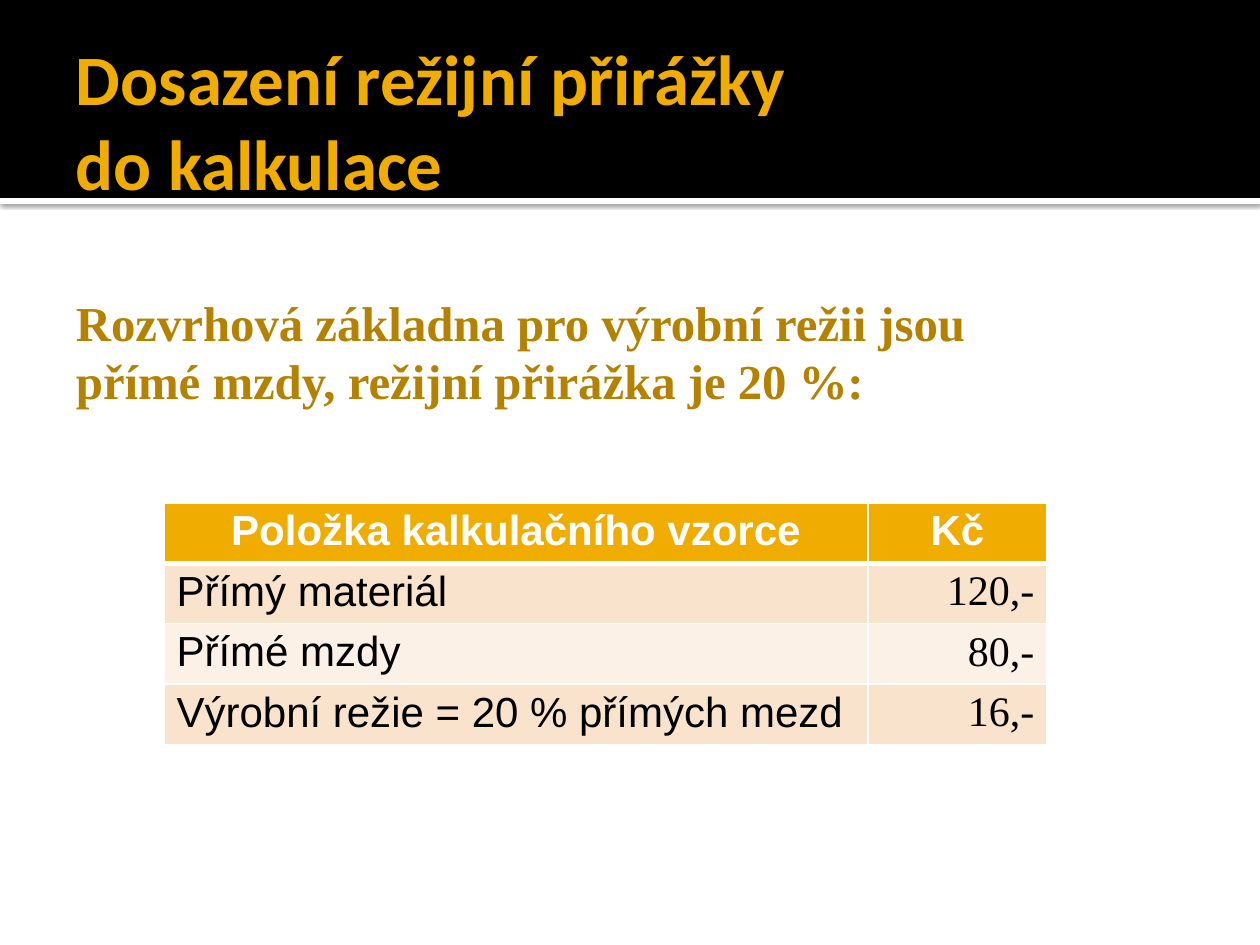
from dataclasses import dataclass

from lxml import etree
from pptx import Presentation
from pptx.dml.color import RGBColor
from pptx.enum.shapes import MSO_SHAPE
from pptx.enum.text import MSO_ANCHOR, PP_ALIGN
from pptx.oxml.ns import qn
from pptx.util import Emu, Pt

RECTANGLE = MSO_SHAPE.RECTANGLE
TOP = MSO_ANCHOR.TOP
LEFT, CENTER, RIGHT = PP_ALIGN.LEFT, PP_ALIGN.CENTER, PP_ALIGN.RIGHT
EMU_PER_PX = 914400 / 126


@dataclass(frozen=True)
class Theme:
    black: str = "000000"
    white: str = "FFFFFF"
    gold: str = "F0AD00"
    dark_gold: str = "B48200"
    bands: tuple = ("F9E3CC", "FCF1E7")
    title_font: str = "Calibri"
    serif: str = "Times New Roman"
    sans: str = "Arial"
    title_size: float = 40.5
    subtitle_size: float = 27.9
    table_size: float = 24


THEME = Theme()
TITLE = ("Dosazení režijní přirážky", "do kalkulace")
SUBTITLE = (
    "Rozvrhová základna pro výrobní režii jsou",
    "přímé mzdy, režijní přirážka je 20 %:",
)
HEADER = ("Položka kalkulačního vzorce", "Kč")
ITEMS = (
    ("Přímý materiál", "120,-"),
    ("Přímé mzdy", "80,-"),
    ("Výrobní režie = 20 % přímých mezd", "16,-"),
)
COLUMN_WIDTHS = (704, 179)
ROW_HEIGHT = 59


def px(length):
    return Emu(round(length * EMU_PER_PX))


def add_span(para, text, font, size, color, bold=False):
    span = para.add_run()
    span.text = text
    span.font.name = font
    span.font.size = Pt(size)
    span.font.bold = bold
    span.font.color.rgb = RGBColor.from_string(color)


def add_lines(para, lines, font, size, color):
    for index, line in enumerate(lines):
        if index:
            para.add_line_break()
        add_span(para, line, font, size, color, bold=True)


def add_band(page, top, height, color):
    band = page.shapes.add_shape(RECTANGLE, 0, px(top), px(1260), px(height))
    band.shadow.inherit = False
    band.fill.solid()
    band.fill.fore_color.rgb = RGBColor.from_string(color)
    band.line.fill.background()
    return band


def add_shadow(shape, color):
    effects = shape._element.spPr.find(qn("a:effectLst"))
    shadow = etree.SubElement(
        effects, qn("a:outerShdw"), blurRad=str(Pt(2.5)), dist=str(Pt(0.8)),
        dir="5400000", algn="t", rotWithShape="0",
    )
    tone = etree.SubElement(shadow, qn("a:srgbClr"), val=color)
    etree.SubElement(tone, qn("a:alpha"), val="60000")


def add_heading(page):
    box = page.shapes.add_textbox(px(63), px(21), px(1134), px(392))
    frame = box.text_frame
    frame.word_wrap = True
    frame.vertical_anchor = TOP
    frame.margin_left, frame.margin_right = px(13), px(6)
    frame.margin_top, frame.margin_bottom = px(14), px(6)
    title = frame.paragraphs[0]
    add_lines(title, TITLE, THEME.title_font, THEME.title_size, THEME.gold)
    subtitle = frame.add_paragraph()
    subtitle.space_before = Pt(50)
    add_lines(subtitle, SUBTITLE, THEME.serif, THEME.subtitle_size, THEME.dark_gold)


def set_borders(cell, bottom_width):
    properties = cell._tc.get_or_add_tcPr()
    widths = {"a:lnL": 1, "a:lnR": 1, "a:lnT": 1, "a:lnB": bottom_width}
    for index, (side, width) in enumerate(widths.items()):
        line = etree.Element(qn(side), w=str(Pt(width)))
        fill = etree.SubElement(line, qn("a:solidFill"))
        etree.SubElement(fill, qn("a:srgbClr"), val=THEME.white)
        properties.insert(index, line)


def fill_cell(cell, text, font, color, fill, align, header=False):
    cell.fill.solid()
    cell.fill.fore_color.rgb = RGBColor.from_string(fill)
    cell.margin_top = cell.margin_bottom = px(5)
    set_borders(cell, 3 if header else 1)
    para = cell.text_frame.paragraphs[0]
    para.alignment = align
    add_span(para, text, font, THEME.table_size, color, header)


def add_cost_table(page):
    row_count = len(ITEMS) + 1
    frame = page.shapes.add_table(
        row_count, len(HEADER), px(164), px(503),
        px(sum(COLUMN_WIDTHS)), px(row_count * ROW_HEIGHT),
    )
    table = frame.table
    for column, width in zip(table.columns, COLUMN_WIDTHS):
        column.width = px(width)
    for row in table.rows:
        row.height = px(ROW_HEIGHT)
    for column, text in enumerate(HEADER):
        fill_cell(table.cell(0, column), text, THEME.sans, THEME.white,
                  THEME.gold, CENTER, header=True)
    styles = ((THEME.sans, LEFT), (THEME.serif, RIGHT))
    for row, item in enumerate(ITEMS, start=1):
        fill = THEME.bands[(row - 1) % 2]
        for column, (text, (font, align)) in enumerate(zip(item, styles)):
            fill_cell(table.cell(row, column), text, font, THEME.black, fill, align)


def main():
    deck = Presentation()
    deck.slide_width, deck.slide_height = px(1260), px(945)
    page = deck.slides.add_slide(deck.slide_layouts[6])
    stripe = add_band(page, 198, 6, THEME.white)
    add_shadow(stripe, THEME.black)
    add_band(page, 0, 198, THEME.black)
    add_heading(page)
    add_cost_table(page)
    deck.save("out.pptx")


if __name__ == "__main__":
    main()
